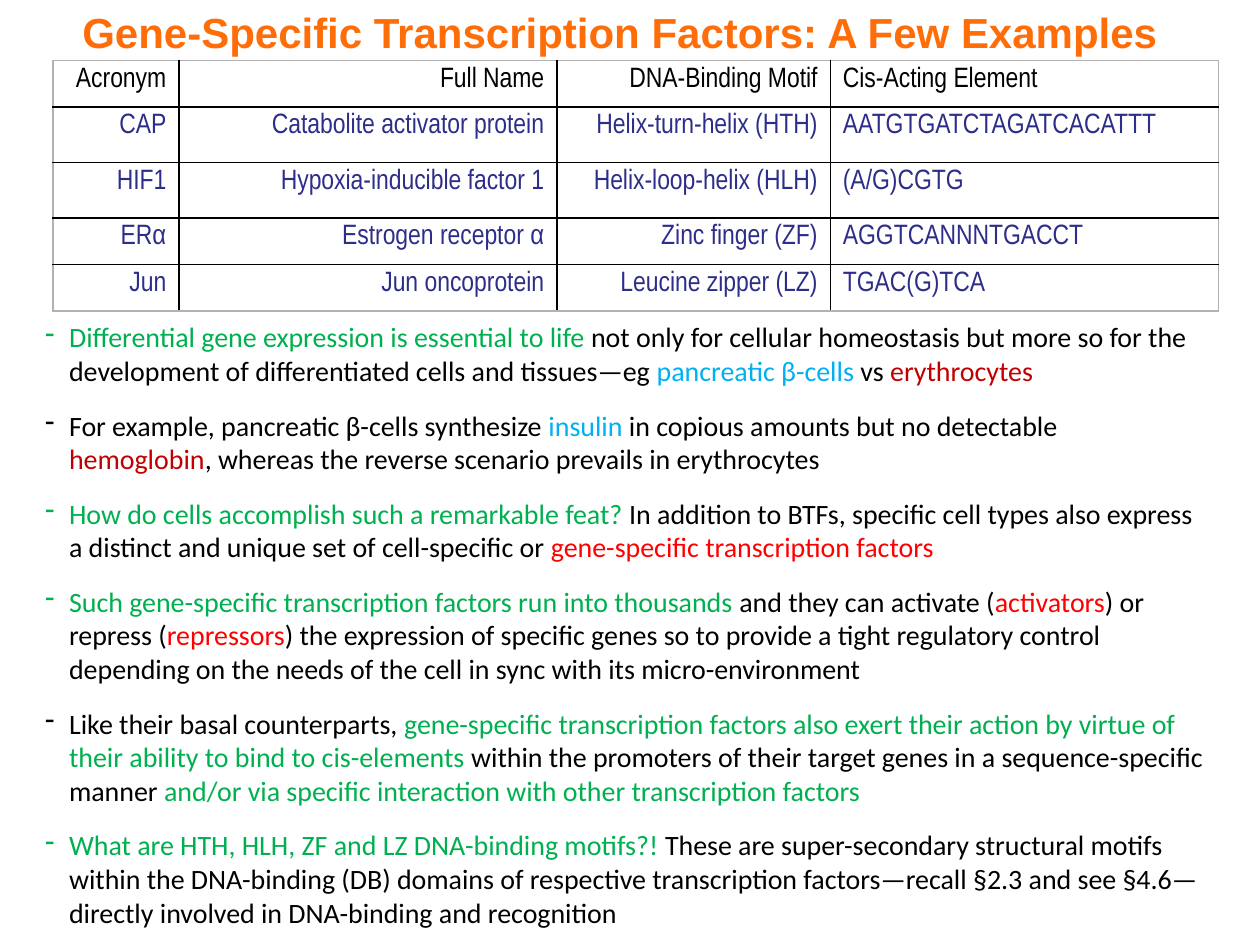
from typing import NamedTuple

from lxml.etree import SubElement
from pptx import Presentation
from pptx.dml.color import RGBColor
from pptx.enum.text import MSO_ANCHOR, MSO_AUTO_SIZE, PP_ALIGN
from pptx.oxml import parse_xml
from pptx.oxml.ns import nsdecls, qn
from pptx.util import Inches, Pt

COLORS = {
    "title": "FF6D09",
    "body": "000000",
    "key": "00B050",
    "insulin": "00B0F0",
    "blood": "C00000",
    "factor": "FF0000",
    "entry": "2D2D8A",
    "grid": "000000",
    "frame": "B2B2B2",
}


class Phrase(NamedTuple):
    text: str
    color: str = "body"


class Factor(NamedTuple):
    acronym: str
    full_name: str
    motif: str
    element: str


FACTORS = [
    Factor("Acronym", "Full Name", "DNA-Binding Motif", "Cis-Acting Element"),
    Factor("CAP", "Catabolite activator protein", "Helix-turn-helix (HTH)", "AATGTGATCTAGATCACATTT"),
    Factor("HIF1", "Hypoxia-inducible factor 1", "Helix-loop-helix (HLH)", "(A/G)CGTG"),
    Factor("ERα", "Estrogen receptor α", "Zinc finger (ZF)", "AGGTCANNNTGACCT"),
    Factor("Jun", "Jun oncoprotein", "Leucine zipper (LZ)", "TGAC(G)TCA"),
]
COLUMN_WIDTHS = [1, 3, 2.17, 3.08]
ROW_HEIGHTS = [0.37, 0.44, 0.44, 0.37, 0.37]

POINTS = [
    [
        Phrase("Differential gene expression is essential to life ", "key"),
        Phrase("not only for cellular homeostasis but more so for the development of "
               "differentiated cells and tissues—eg "),
        Phrase("pancreatic β-cells ", "insulin"),
        Phrase("vs "),
        Phrase("erythrocytes", "blood"),
    ],
    [
        Phrase("For example, pancreatic β-cells synthesize "),
        Phrase("insulin", "insulin"),
        Phrase(" in copious amounts but no detectable "),
        Phrase("hemoglobin", "blood"),
        Phrase(", whereas the reverse scenario prevails in erythrocytes"),
    ],
    [
        Phrase("How do cells accomplish such a remarkable feat? ", "key"),
        Phrase("In addition to BTFs, specific cell types also express a distinct and "
               "unique set of cell-specific or "),
        Phrase("gene-specific transcription factors", "factor"),
    ],
    [
        Phrase("Such gene-specific transcription factors run into thousands ", "key"),
        Phrase("and they can activate ("),
        Phrase("activators", "factor"),
        Phrase(") or repress ("),
        Phrase("repressors", "factor"),
        Phrase(") the expression of specific genes so to provide a tight regulatory control "
               "depending on the needs of the cell in sync with its micro-environment"),
    ],
    [
        Phrase("Like their basal counterparts, "),
        Phrase("gene-specific transcription factors also exert their action by virtue of "
               "their ability to bind to cis-elements ", "key"),
        Phrase("within the promoters of their target genes in a sequence-specific manner "),
        Phrase("and/or via specific interaction with other transcription factors", "key"),
    ],
    [
        Phrase("What are HTH, HLH, ZF and LZ DNA-binding motifs?! ", "key"),
        Phrase("These are super-secondary structural motifs within the DNA-binding (DB) "
               "domains of respective transcription factors—recall §2.3 and see "
               "§4.6—directly involved in DNA-binding and recognition"),
    ],
]


def format_font(font, name: str, size: float, color: str, bold: bool = False) -> None:
    font.name = name
    font.size = Pt(size)
    font.bold = bold
    font.color.rgb = RGBColor.from_string(COLORS[color])


def add_title(slide, text: str) -> None:
    title = slide.shapes.title
    title.left, title.top = Inches(0.42), Inches(0)
    title.width, title.height = Inches(9), Inches(0.5)
    frame = title.text_frame
    frame.text = text
    frame.vertical_anchor = MSO_ANCHOR.MIDDLE
    heading = frame.paragraphs[0]
    heading.alignment = PP_ALIGN.CENTER
    format_font(heading.runs[0].font, "Arial", 24, "title", bold=True)


def set_borders(cell, outer_sides: set[str]) -> None:
    """Line all four sides; sides on the table's edge take the frame colour."""
    properties = cell._tc.get_or_add_tcPr()
    for position, side in enumerate("LRTB"):
        color = COLORS["frame" if side in outer_sides else "grid"]
        properties.insert(position, parse_xml(
            f'<a:ln{side} {nsdecls("a")} w="12700"><a:solidFill>'
            f'<a:srgbClr val="{color}"/></a:solidFill></a:ln{side}>'))


def add_factor_table(slide, factors: list[Factor]) -> None:
    last_row, last_column = len(factors) - 1, len(COLUMN_WIDTHS) - 1
    table = slide.shapes.add_table(
        len(factors), len(COLUMN_WIDTHS), Inches(0.42), Inches(0.48),
        Inches(sum(COLUMN_WIDTHS)), Inches(sum(ROW_HEIGHTS))).table
    table.first_row = table.horz_banding = False
    for column, width in zip(table.columns, COLUMN_WIDTHS):
        column.width = Inches(width)
    for row, height in zip(table.rows, ROW_HEIGHTS):
        row.height = Inches(height)

    for r, factor in enumerate(factors):
        for c, entry in enumerate(factor):
            cell = table.cell(r, c)
            cell.fill.background()
            cell.text = entry
            paragraph = cell.text_frame.paragraphs[0]
            paragraph.alignment = PP_ALIGN.LEFT if c == last_column else PP_ALIGN.RIGHT
            format_font(paragraph.runs[0].font, "Arial Narrow", 16, "entry" if r else "body")
            edges = {"L": c == 0, "R": c == last_column, "T": r == 0, "B": r == last_row}
            set_borders(cell, {side for side, outer in edges.items() if outer})


def add_dash_bullet(paragraph) -> None:
    properties = paragraph._p.get_or_add_pPr()
    properties.set("marL", str(Inches(0.19)))
    properties.set("indent", str(-Inches(0.19)))
    SubElement(properties, qn("a:buFontTx"))
    SubElement(properties, qn("a:buChar")).set("char", "-")


def add_points(slide, points: list[list[Phrase]]) -> None:
    frame = slide.shapes.add_textbox(
        Inches(0.26), Inches(2.49), Inches(9.41), Inches(4.98)).text_frame
    frame.word_wrap = True
    frame.auto_size = MSO_AUTO_SIZE.SHAPE_TO_FIT_TEXT
    for index, phrases in enumerate(points):
        paragraph = frame.add_paragraph() if index else frame.paragraphs[0]
        paragraph.space_after = Pt(12 if index < len(points) - 1 else 0)
        add_dash_bullet(paragraph)
        for phrase in phrases:
            run = paragraph.add_run()
            run.text = phrase.text
            format_font(run.font, "Calibri", 16, phrase.color)


def main() -> None:
    presentation = Presentation()
    presentation.slide_width, presentation.slide_height = Inches(10), Inches(7.5)
    title_only = presentation.slide_layouts[5]
    slide = presentation.slides.add_slide(title_only)
    add_title(slide, "Gene-Specific Transcription Factors: A Few Examples")
    add_points(slide, POINTS)
    add_factor_table(slide, FACTORS)
    presentation.save("out.pptx")


if __name__ == "__main__":
    main()
